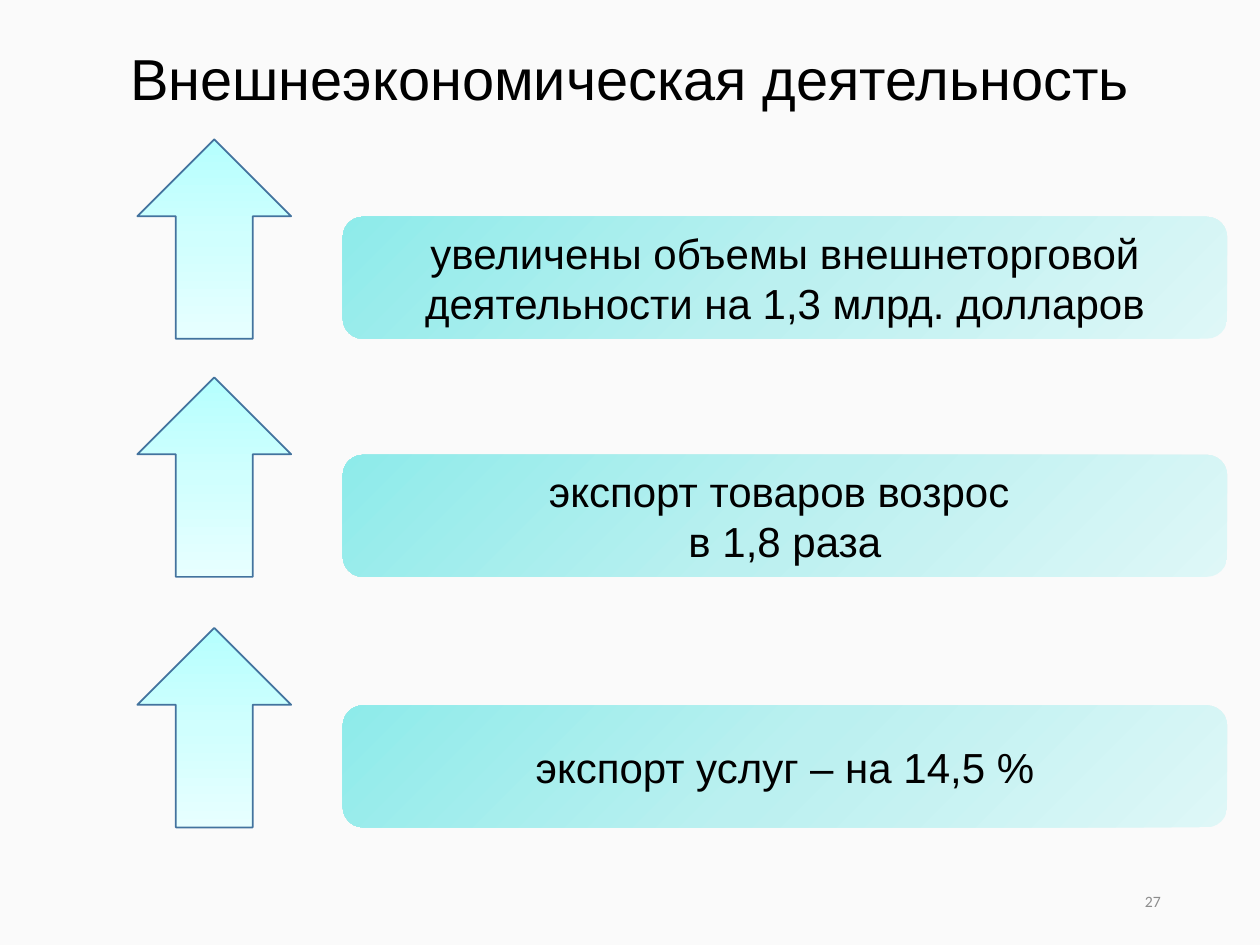
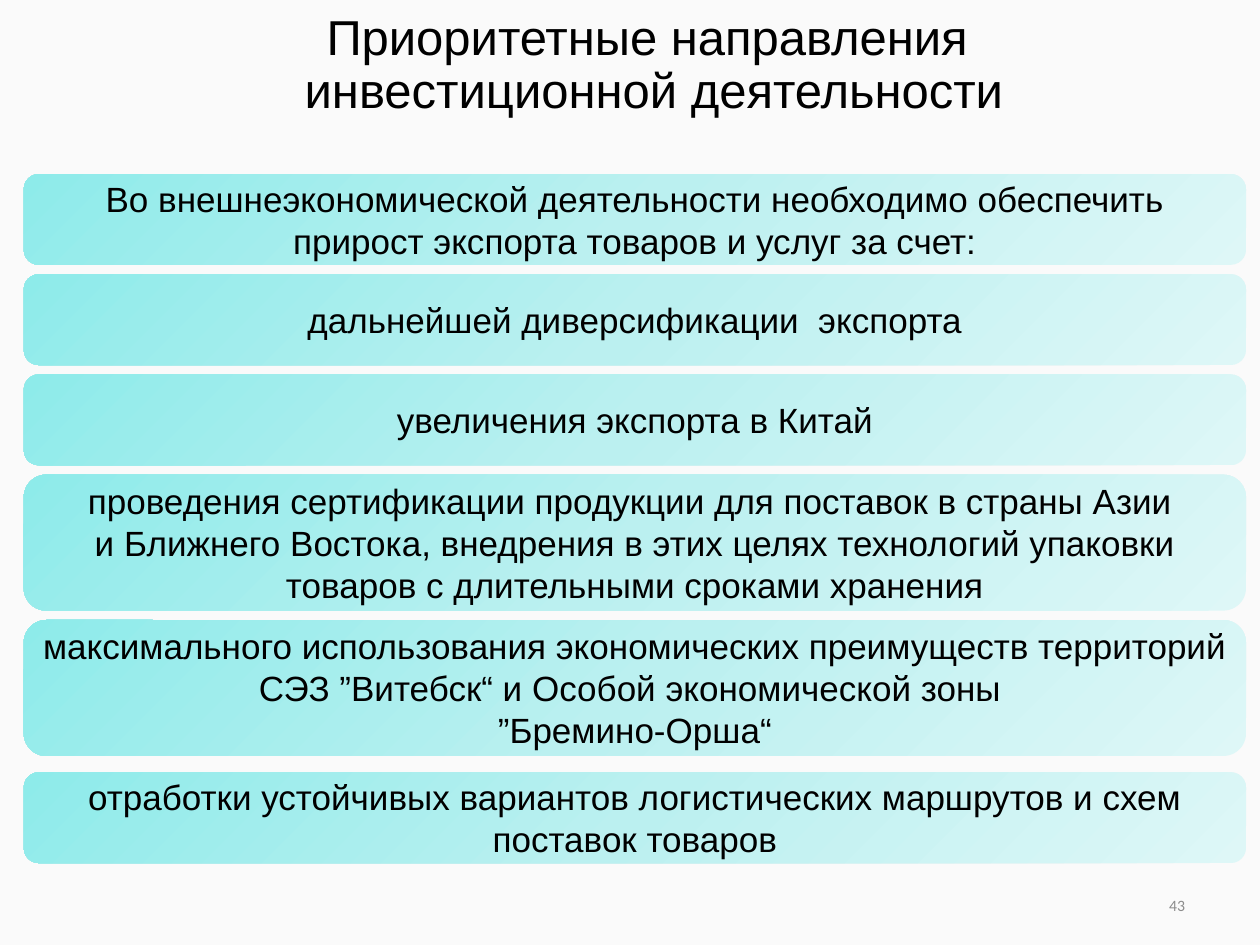
"""Build two slides on foreign trade results and investment priorities."""
from pptx import Presentation, oxml
from pptx import util as u
from pptx.dml.color import RGBColor
from pptx.enum import shapes, text
from pptx.oxml import ns

BACKGROUND, INK, GREY, OUTLINE = "FAFAFA", "000000", "8C8C8C", "43739E"
BAND_STOPS = ("8EEBEA", "BBF0F0", "DEF7F7")
ARROW_STOPS = ("B5FFFE", "D0FFFE", "E7FFFF")
FROM_CORNER = '<a:path path="circle"><a:fillToRect r="100000" b="100000"/></a:path>'
DOWNWARD = '<a:lin ang="5400000" scaled="1"/>'
colour = RGBColor.from_string


def write(shape, content, size, font="Arial", ink=INK, align=text.PP_ALIGN.CENTER, spacing=None):
    """Fill a shape with vertically centred paragraphs, one per line of content."""
    frame = shape.text_frame
    frame.word_wrap = True
    frame.vertical_anchor = text.MSO_ANCHOR.MIDDLE
    frame.text = content
    for paragraph in frame.paragraphs:
        paragraph.alignment = align
        if spacing:
            paragraph.line_spacing = spacing
        for run in paragraph.runs:
            run.font.size = u.Pt(size)
            run.font.name = font
            run.font.color.rgb = colour(ink)


def add_gradient_shape(slide, kind, box, stops, direction):
    """Add a preset shape without outline, filled with three even gradient stops."""
    shape = slide.shapes.add_shape(kind, *map(u.Cm, box))
    shape.shadow.inherit = False
    shape.line.fill.background()
    shape.fill.gradient()
    stop_xml = "".join(
        f'<a:gs pos="{index * 50000}"><a:srgbClr val="{stop}"/></a:gs>'
        for index, stop in enumerate(stops))
    gradient = oxml.parse_xml(
        f'<a:gradFill {ns.nsdecls("a")} rotWithShape="1">'
        f'<a:gsLst>{stop_xml}</a:gsLst>{direction}</a:gradFill>')
    properties = shape._element.spPr
    properties.replace(properties.find(ns.qn("a:gradFill")), gradient)
    return shape


presentation = Presentation()
presentation.slide_width = u.Cm(25.4)
presentation.slide_height = u.Cm(19.05)

pages = [
    {"title": "Внешнеэкономическая деятельность", "title_at": (0, 0.94),
     "title_size": 33, "title_spacing": 0.8,
     "number": "27", "number_at": (17.93, 17.65),
     "band_left": 6.91, "band_width": 17.83, "band_size": 24, "arrows": True,
     "bands": [
         (4.37, 2.46, "увеличены объемы внешнеторговой деятельности на 1,3 млрд. долларов"),
         (9.17, 2.46, "экспорт товаров возрос \nв 1,8 раза"),
         (14.22, 2.46, "экспорт услуг – на 14,5 %")]},
    {"title": "Приоритетные направления \nинвестиционной деятельности", "title_at": (0.48, 0.58),
     "title_size": 28, "title_spacing": 0.9,
     "number": "43", "number_at": (18.42, 17.73),
     "band_left": 0.48, "band_width": 24.64, "band_size": 20, "arrows": False,
     "bands": [
         (3.51, 1.83, "Во внешнеэкономической деятельности необходимо обеспечить "
                      "прирост экспорта товаров и услуг за счет:"),
         (5.53, 1.83, "дальнейшей диверсификации  экспорта"),
         (7.55, 1.83, "увеличения экспорта в Китай"),
         (9.57, 2.74, "проведения сертификации продукции для поставок в страны Азии \n"
                      "и Ближнего Востока, внедрения в этих целях технологий упаковки "
                      "товаров с длительными сроками хранения"),
         (12.5, 2.74, "максимального использования экономических преимуществ территорий "
                      "СЭЗ ”Витебск“ и Особой экономической зоны \v”Бремино-Орша“"),
         (15.57, 1.83, "отработки устойчивых вариантов логистических маршрутов "
                       "и схем поставок товаров")]},
]

for page in pages:
    slide = presentation.slides.add_slide(presentation.slide_layouts[6])
    slide.background.fill.solid()
    slide.background.fill.fore_color.rgb = colour(BACKGROUND)

    number = slide.shapes.add_textbox(*map(u.Cm, (*page["number_at"], 5.72, 1.02)))
    write(number, page["number"], 9, font="Calibri", ink=GREY, align=text.PP_ALIGN.RIGHT)
    title = slide.shapes.add_textbox(*map(u.Cm, (*page["title_at"], 25.4, 1.5)))
    write(title, page["title"], page["title_size"], spacing=page["title_spacing"])

    for top, height, content in page["bands"]:
        band = add_gradient_shape(
            slide, shapes.MSO_SHAPE.ROUNDED_RECTANGLE,
            (page["band_left"], top, page["band_width"], height), BAND_STOPS, FROM_CORNER)
        band.text_frame.margin_left = band.text_frame.margin_right = u.Cm(0.25)
        write(band, content, page["band_size"])
        if page["arrows"]:
            arrow = add_gradient_shape(
                slide, shapes.MSO_SHAPE.UP_ARROW,
                (2.77, top + height - 4.02, 3.1, 4.02), ARROW_STOPS, DOWNWARD)
            arrow.line.color.rgb = colour(OUTLINE)
            arrow.line.width = u.Pt(1)

presentation.save("out.pptx")
